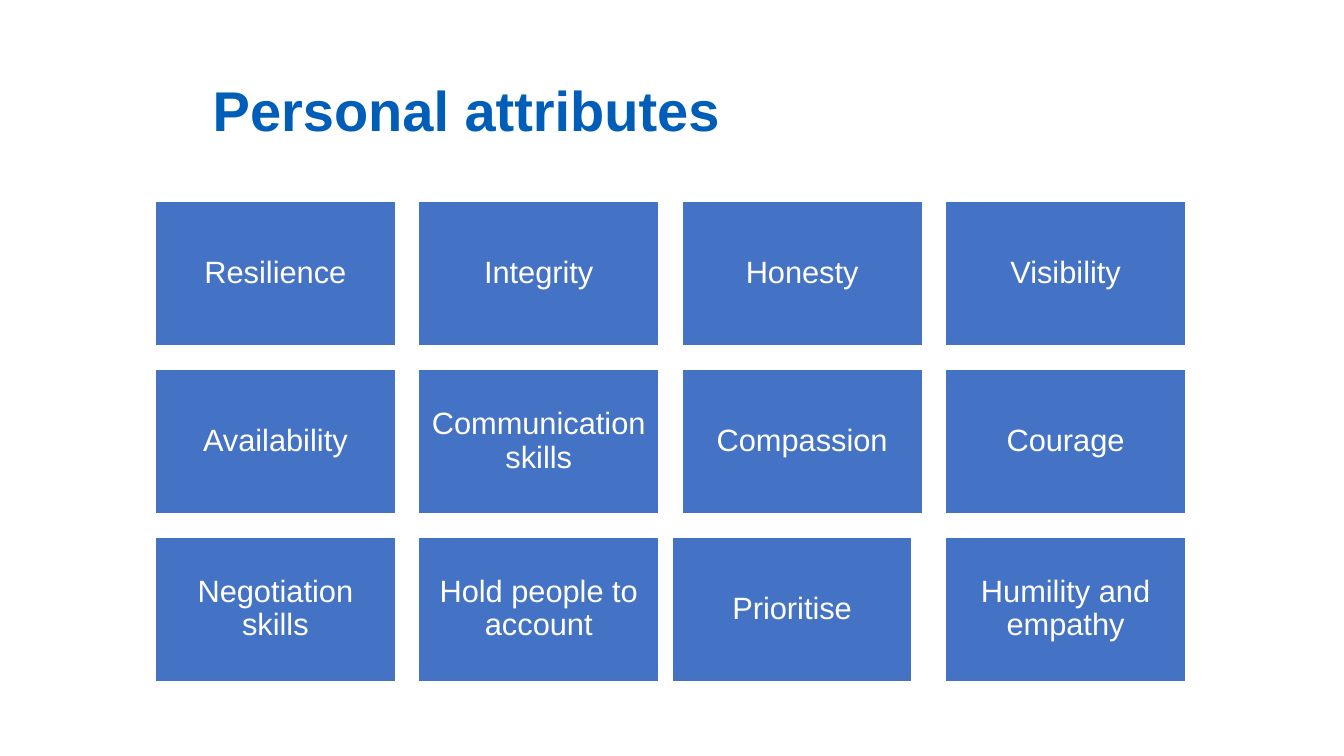
from pptx import Presentation
from pptx.dml.color import RGBColor
from pptx.enum.shapes import MSO_SHAPE
from pptx.enum.text import MSO_ANCHOR, MSO_AUTO_SIZE, PP_ALIGN
from pptx.util import Inches, Pt

RECT = MSO_SHAPE.RECTANGLE
MIDDLE = MSO_ANCHOR.MIDDLE
NO_FIT = MSO_AUTO_SIZE.NONE
LEFT, CENTER = PP_ALIGN.LEFT, PP_ALIGN.CENTER

TITLE_BLUE = RGBColor(0x00, 0x5E, 0xB8)
TILE_BLUE = RGBColor(0x44, 0x72, 0xC4)
WHITE = RGBColor(0xFF, 0xFF, 0xFF)

TITLE_BOX = (2.11, 0.4, 8.49, 1.45)
GRID_BOX = (1.54, 2, 10.22, 4.76)
GAP = 0.23
ATTRIBUTES = [
    ["Resilience", "Integrity", "Honesty", "Visibility"],
    ["Availability", "Communication skills", "Compassion", "Courage"],
    ["Negotiation skills", "Hold people to account", "Prioritise", "Humility and empathy"],
]
SHIFTS = {"Prioritise": -0.1}


def set_text(sp, text, size, color, align, inset, bold=False):
    """Write one formatted line of text into a shape."""
    tf = sp.text_frame
    tf.text = text
    tf.word_wrap = True
    tf.auto_size = NO_FIT
    tf.vertical_anchor = MIDDLE
    tf.margin_left = tf.margin_right = tf.margin_top = tf.margin_bottom = Inches(inset)
    p = tf.paragraphs[0]
    p.alignment = align
    p.line_spacing = 0.9
    p.font.name = "Arial"
    p.font.size = Pt(size)
    p.font.bold = bold
    p.font.color.rgb = color


def add_title(s, box, text):
    """Place and format the title placeholder."""
    sp = s.shapes.title
    sp.left, sp.top, sp.width, sp.height = map(Inches, box)
    set_text(sp, text, 40, TITLE_BLUE, LEFT, 0, bold=True)


def add_tile(s, box, text):
    """Draw one attribute tile."""
    sp = s.shapes.add_shape(RECT, *map(Inches, box))
    sp.shadow.inherit = False
    sp.fill.solid()
    sp.fill.fore_color.rgb = TILE_BLUE
    sp.line.color.rgb = WHITE
    sp.line.width = Pt(1)
    set_text(sp, text, 22, WHITE, CENTER, 0.09)


def add_grid(s, box, rows):
    """Spread the attribute tiles evenly over a box."""
    left, top, width, height = box
    cols = len(rows[0])
    w = (width - GAP * (cols - 1)) / cols
    h = (height - GAP * (len(rows) - 1)) / len(rows)
    for i, row in enumerate(rows):
        for j, text in enumerate(row):
            x = left + j * (w + GAP) + SHIFTS.get(text, 0)
            add_tile(s, (x, top + i * (h + GAP), w, h), text)


def main():
    """Build the slide and save it."""
    prs = Presentation()
    prs.slide_width, prs.slide_height = Inches(13.33), Inches(7.5)
    s = prs.slides.add_slide(prs.slide_layouts[5])
    add_title(s, TITLE_BOX, "Personal attributes")
    add_grid(s, GRID_BOX, ATTRIBUTES)
    prs.save("out.pptx")


if __name__ == "__main__":
    main()
